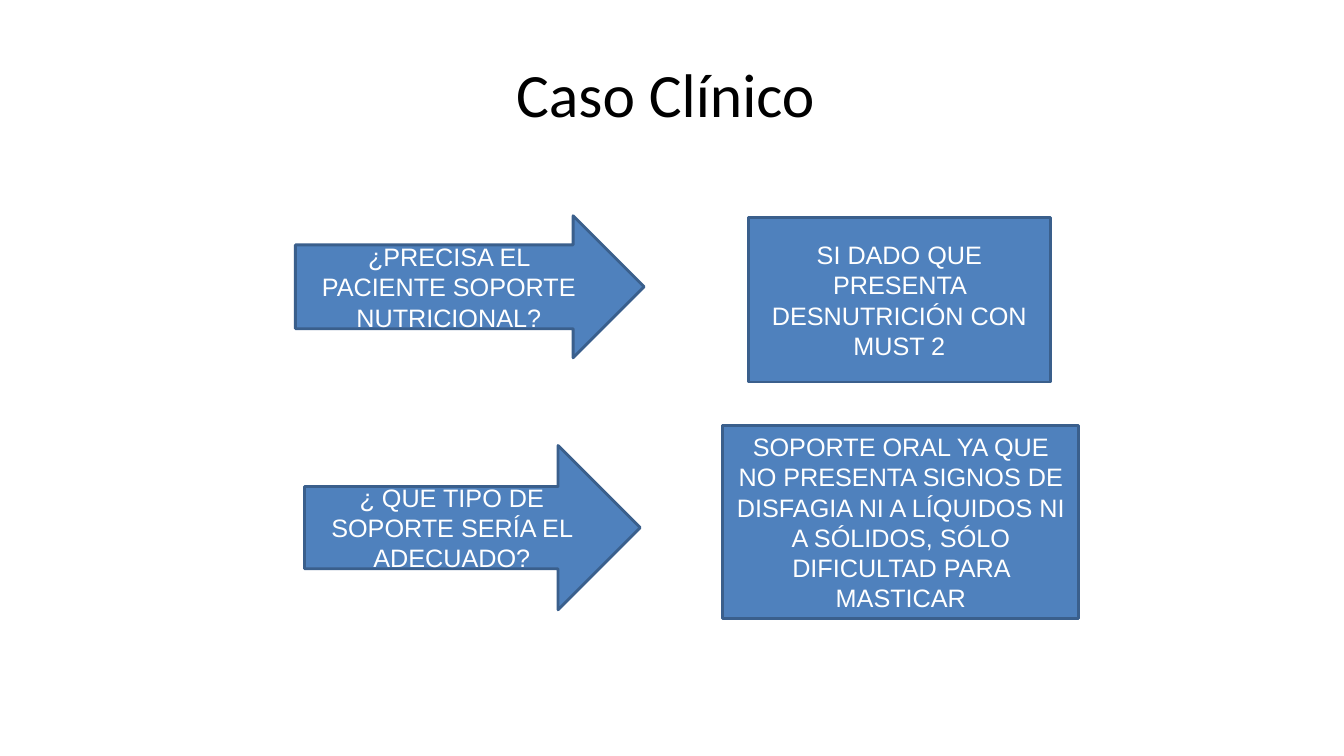
import pptx
import pptx.dml.color
import pptx.enum.shapes
import pptx.enum.text
import pptx.util

Inches = pptx.util.Inches
ARROW = pptx.enum.shapes.MSO_SHAPE.RIGHT_ARROW
RECTANGLE = pptx.enum.shapes.MSO_SHAPE.RECTANGLE

CASE_STEPS = [
    (
        ("¿PRECISA EL PACIENTE SOPORTE NUTRICIONAL?", (2.93, 2.14, 3.46, 1.41), 0.59),
        ("SI DADO QUE PRESENTA DESNUTRICIÓN CON MUST 2", (7.42, 2.16, 3, 1.63)),
    ),
    (
        ("¿ QUE TIPO DE SOPORTE SERÍA EL ADECUADO?", (3.02, 4.42, 3.33, 1.63), 0.5),
        ("SOPORTE ORAL YA QUE NO PRESENTA SIGNOS DE DISFAGIA NI A LÍQUIDOS "
         "NI A SÓLIDOS, SÓLO DIFICULTAD PARA MASTICAR", (7.17, 4.22, 3.53, 1.92)),
    ),
]


def color(value):
    return pptx.dml.color.RGBColor.from_string(value)


def write_text(shape, text, size, font_name, font_color):
    frame = shape.text_frame
    frame.word_wrap = True
    frame.vertical_anchor = pptx.enum.text.MSO_ANCHOR.MIDDLE
    paragraph = frame.paragraphs[0]
    paragraph.text = text
    paragraph.alignment = pptx.enum.text.PP_ALIGN.CENTER
    paragraph.font.size = pptx.util.Pt(size)
    paragraph.font.name = font_name
    paragraph.font.color.rgb = color(font_color)


def add_title(slide, text, box):
    title = slide.shapes.add_textbox(*map(Inches, box))
    write_text(title, text, 44, "Calibri", "000000")


def add_block(slide, kind, text, box):
    block = slide.shapes.add_shape(kind, *map(Inches, box))
    block.shadow.inherit = False
    block.fill.solid()
    block.fill.fore_color.rgb = color("4F81BD")
    block.line.color.rgb = color("3A5F8C")
    block.line.width = pptx.util.Pt(2)
    write_text(block, text, 18, "Arial", "FFFFFF")
    return block


def add_question(slide, text, box, shaft):
    question = add_block(slide, ARROW, text, box)
    question.adjustments[0] = shaft
    question.adjustments[1] = 0.5


def add_answer(slide, text, box):
    add_block(slide, RECTANGLE, text, box)


def main():
    presentation = pptx.Presentation()
    presentation.slide_width = Inches(13.33)
    presentation.slide_height = Inches(7.5)
    slide = presentation.slides.add_slide(presentation.slide_layouts[6])
    add_title(slide, "Caso Clínico ", (0.67, 0.3, 12, 1.25))
    for question, answer in CASE_STEPS:
        add_question(slide, *question)
        add_answer(slide, *answer)
    presentation.save("out.pptx")


if __name__ == "__main__":
    main()
